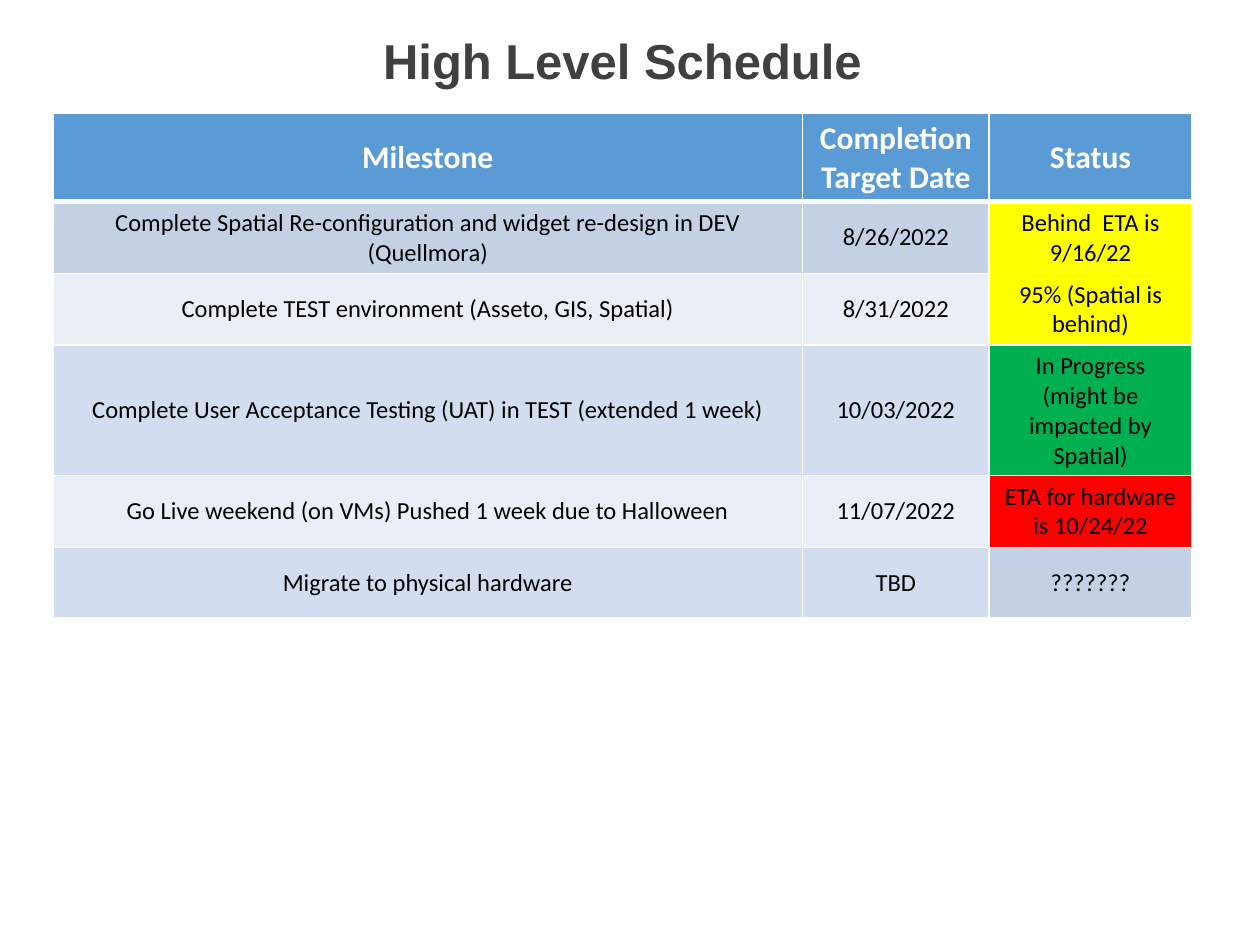
from lxml.etree import SubElement
from pptx import Presentation
from pptx.dml.color import RGBColor
from pptx.enum.text import MSO_ANCHOR as Anchor, PP_ALIGN as Align
from pptx.oxml.ns import qn
from pptx.util import Inches, Pt

WHITE = RGBColor(0xFF, 0xFF, 0xFF)
BLACK = RGBColor(0x00, 0x00, 0x00)
CHARCOAL = RGBColor(0x40, 0x40, 0x40)
HEADER_BLUE = RGBColor(0x5B, 0x9B, 0xD5)
STEEL = RGBColor(0xC4, 0xD1, 0xE4)
PALE = RGBColor(0xEA, 0xEF, 0xF7)
LIGHT = RGBColor(0xD2, 0xDE, 0xEF)
YELLOW = RGBColor(0xFF, 0xFF, 0x00)
GREEN = RGBColor(0x00, 0xB0, 0x50)
RED = RGBColor(0xFF, 0x00, 0x00)

# Content: each milestone has its texts, row fill and status fill
TITLE = "High Level Schedule"
HEADER = ("Milestone", "Completion Target Date", "Status")
MILESTONES = [
    (("Complete Spatial Re-configuration and widget re-design in DEV (Quellmora)",
      "8/26/2022", "Behind  ETA is 9/16/22"), STEEL, YELLOW),
    (("Complete TEST environment (Asseto, GIS, Spatial)",
      "8/31/2022", "95% (Spatial is behind)"), PALE, YELLOW),
    (("Complete User Acceptance Testing (UAT) in TEST (extended 1 week)",
      "10/03/2022", "In Progress (might be impacted by Spatial)"), LIGHT, GREEN),
    (("Go Live weekend (on VMs) Pushed 1 week due to Halloween",
      "11/07/2022", "ETA for hardware is 10/24/22"), PALE, RED),
    (("Migrate to physical hardware", "TBD", "???????"), LIGHT, STEEL),
]

# Layout in inches
LEFT, WIDTH = 0.42, 9.04
TITLE_TOP, TITLE_HEIGHT = 0.19, 0.57
TABLE_TOP = 0.9
COLUMNS = (5.95, 1.48, 1.61)
ROWS = (0.69, 0.57, 0.57, 1.03, 0.57, 0.56)


def write(frame, text, font, size, color, bold):
    para = frame.paragraphs[0]
    para.alignment = Align.CENTER
    span = para.add_run()
    span.text = text
    span.font.name = font
    span.font.size = Pt(size)
    span.font.bold = bold
    span.font.color.rgb = color


def add_borders(cell, bottom):
    props = cell._tc.get_or_add_tcPr()
    for side, width in (("L", 1), ("R", 1), ("T", 1), ("B", bottom)):
        line = SubElement(props, qn(f"a:ln{side}"), w=str(Pt(width)))
        fill = SubElement(line, qn("a:solidFill"))
        SubElement(fill, qn("a:srgbClr"), val=str(WHITE))


def fill_row(table, row, texts, fills, size, color, bold, bottom=1):
    for column, (text, fill) in enumerate(zip(texts, fills)):
        cell = table.cell(row, column)
        add_borders(cell, bottom)
        cell.fill.solid()
        cell.fill.fore_color.rgb = fill
        cell.vertical_anchor = Anchor.MIDDLE
        write(cell.text_frame, text, "Calibri", size, color, bold)


def main():
    deck = Presentation()
    deck.slide_width, deck.slide_height = Inches(10), Inches(7.5)
    page = deck.slides.add_slide(deck.slide_layouts[6])

    # Title
    box = page.shapes.add_textbox(Inches(LEFT), Inches(TITLE_TOP),
                                  Inches(WIDTH), Inches(TITLE_HEIGHT))
    box.text_frame.word_wrap = True
    write(box.text_frame, TITLE, "Arial", 28, CHARCOAL, True)

    # Schedule table
    table = page.shapes.add_table(
        len(ROWS), len(COLUMNS), Inches(LEFT), Inches(TABLE_TOP),
        Inches(WIDTH), Inches(sum(ROWS))).table
    for column, width in zip(table.columns, COLUMNS):
        column.width = Inches(width)
    for row, height in zip(table.rows, ROWS):
        row.height = Inches(height)

    fill_row(table, 0, HEADER, [HEADER_BLUE] * 3, 18, WHITE, True, bottom=3)
    for row, (texts, fill, status) in enumerate(MILESTONES, start=1):
        fill_row(table, row, texts, (fill, fill, status), 14, BLACK, False)
    # The first milestone sits under the header's thick line
    for column in range(len(COLUMNS)):
        props = table.cell(1, column)._tc.tcPr
        props.find(qn("a:lnT")).set("w", str(Pt(3)))

    deck.save("out.pptx")


if __name__ == "__main__":
    main()
